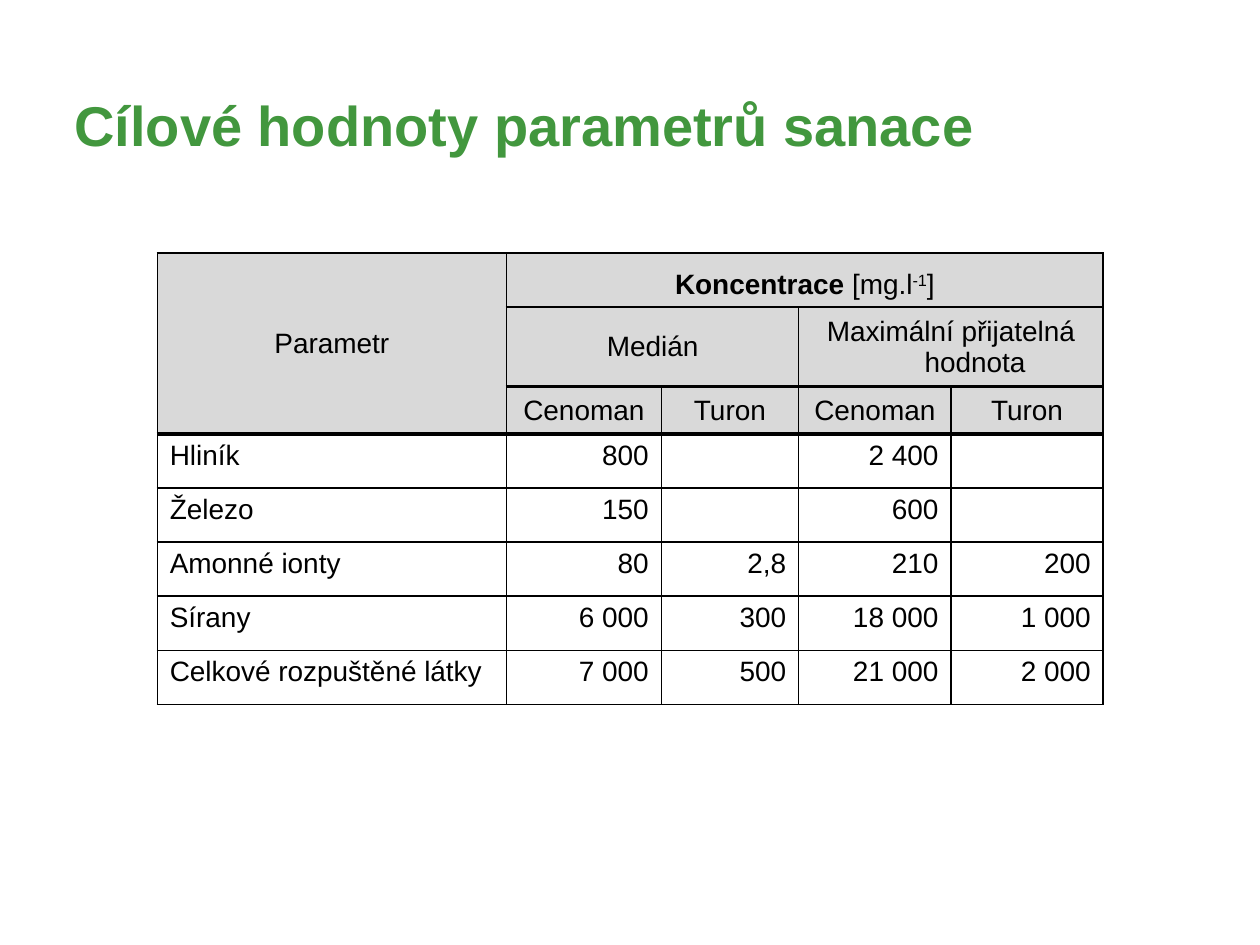
from lxml.etree import SubElement
from pptx import Presentation
from pptx.dml.color import RGBColor
from pptx.enum.text import MSO_ANCHOR as Anchor, MSO_AUTO_SIZE as AutoSize, PP_ALIGN as Align
from pptx.oxml.ns import qn
from pptx.util import Cm, Pt

# Content
HEADING = "Cílové hodnoty parametrů sanace"
# Header cells: (row, column, rows spanned, columns spanned, runs)
# A run is (text, bold, baseline in thousandths of a percent)
HEADERS = [
    (0, 0, 3, 1, [("Parametr", False, 0)]),
    (0, 1, 1, 4, [("Koncentrace ", True, 0), ("[mg.l", False, 0),
                  ("-1", False, 30000), ("]", False, 0)]),
    (1, 1, 1, 2, [("Medián", False, 0)]),
    (1, 3, 1, 2, [("Maximální přijatelná hodnota", False, 0)]),
] + [(2, col, 1, 1, [(layer, False, 0)])
     for col, layer in enumerate(["Cenoman", "Turon"] * 2, start=1)]
LIMITS = [
    ("Hliník", "800", "", "2 400", ""),
    ("Železo", "150", "", "600", ""),
    ("Amonné ionty", "80", "2,8", "210", "200"),
    ("Sírany", "6 000", "300", "18 000", "1 000"),
    ("Celkové rozpuštěné látky", "7 000", "500", "21 000", "2 000"),
]

# Look
COLORS = {"heading": "42973E", "header": "D9D9D9", "ink": "000000"}
FONT = "Arial"
COL_WIDTHS = [7.04, 3.12, 2.77, 3.07, 3.07]
HEADER_HEIGHTS = [1.09, 1.6, 0.95]
LIMIT_HEIGHT = 1.09
HANGING = Cm(0.97)
HEAVY_RULES = (2, 3)  # rows whose top edge is drawn thicker


def add_run(paragraph, text, size, color, bold=False, baseline=0):
    run = paragraph.add_run()
    run.text = text
    run.font.name, run.font.size, run.font.bold = FONT, Pt(size), bold
    run.font.color.rgb = RGBColor.from_string(COLORS[color])
    if baseline:
        run.font._element.set("baseline", str(baseline))


def write_cell(cell, runs, align):
    paragraph = cell.text_frame.paragraphs[0]
    paragraph.alignment = align
    props = paragraph._p.get_or_add_pPr()
    props.set("marL", str(HANGING))
    props.set("indent", str(-HANGING))
    for text, bold, baseline in runs:
        add_run(paragraph, text, 16, "ink", bold, baseline)


def rule_cell(cell, row):
    below = row + (cell.span_height if cell.is_merge_origin else 1)
    widths = {"a:lnL": 1, "a:lnR": 1,
              "a:lnT": 2 if row in HEAVY_RULES else 1,
              "a:lnB": 2 if below in HEAVY_RULES else 1}
    props = cell._tc.get_or_add_tcPr()
    for position, (edge, width) in enumerate(widths.items()):
        line = SubElement(props, qn(edge), w=str(Pt(width)))
        fill = SubElement(line, qn("a:solidFill"))
        SubElement(fill, qn("a:srgbClr"), val=COLORS["ink"])
        props.insert(position, line)


def add_heading(slide):
    title = slide.shapes.title
    title.left, title.top, title.width, title.height = Cm(1.5), Cm(1.7), Cm(18.54), Cm(1.63)
    frame = title.text_frame
    frame.word_wrap, frame.auto_size = False, AutoSize.SHAPE_TO_FIT_TEXT
    frame.vertical_anchor = Anchor.TOP
    frame.margin_left, frame.margin_right = 0, Cm(0.25)
    frame.margin_top = frame.margin_bottom = Cm(0.13)
    frame.paragraphs[0].alignment = Align.LEFT
    add_run(frame.paragraphs[0], HEADING, 32, "heading", bold=True)


def add_limits_table(slide):
    heights = HEADER_HEIGHTS + [LIMIT_HEIGHT] * len(LIMITS)
    table = slide.shapes.add_table(len(heights), len(COL_WIDTHS), Cm(3.17), Cm(5.1),
                                   Cm(sum(COL_WIDTHS)), Cm(sum(heights))).table
    table.first_row = table.horz_banding = False
    for column, width in zip(table.columns, COL_WIDTHS):
        column.width = Cm(width)
    for row, height in zip(table.rows, heights):
        row.height = Cm(height)

    # Header cells
    for row, col, down, across, runs in HEADERS:
        cell = table.cell(row, col)
        if down * across > 1:
            cell.merge(table.cell(row + down - 1, col + across - 1))
        cell.vertical_anchor = Anchor.BOTTOM if (row, col) == (0, 1) else Anchor.MIDDLE
        write_cell(cell, runs, Align.CENTER)

    # Limit values
    for row, limits in enumerate(LIMITS, start=len(HEADER_HEIGHTS)):
        for col, text in enumerate(limits):
            if text:
                write_cell(table.cell(row, col), [(text, False, 0)],
                           Align.RIGHT if col else Align.LEFT)

    # Fills and rules
    for row in range(len(heights)):
        for col in range(len(COL_WIDTHS)):
            cell = table.cell(row, col)
            if row < len(HEADER_HEIGHTS):
                cell.fill.solid()
                cell.fill.fore_color.rgb = RGBColor.from_string(COLORS["header"])
            else:
                cell.fill.background()
            rule_cell(cell, row)


def main():
    deck = Presentation()
    deck.slide_width, deck.slide_height = Cm(25.4), Cm(19.05)
    slide = deck.slides.add_slide(deck.slide_layouts[5])
    add_heading(slide)
    add_limits_table(slide)
    deck.save("out.pptx")


if __name__ == "__main__":
    main()
